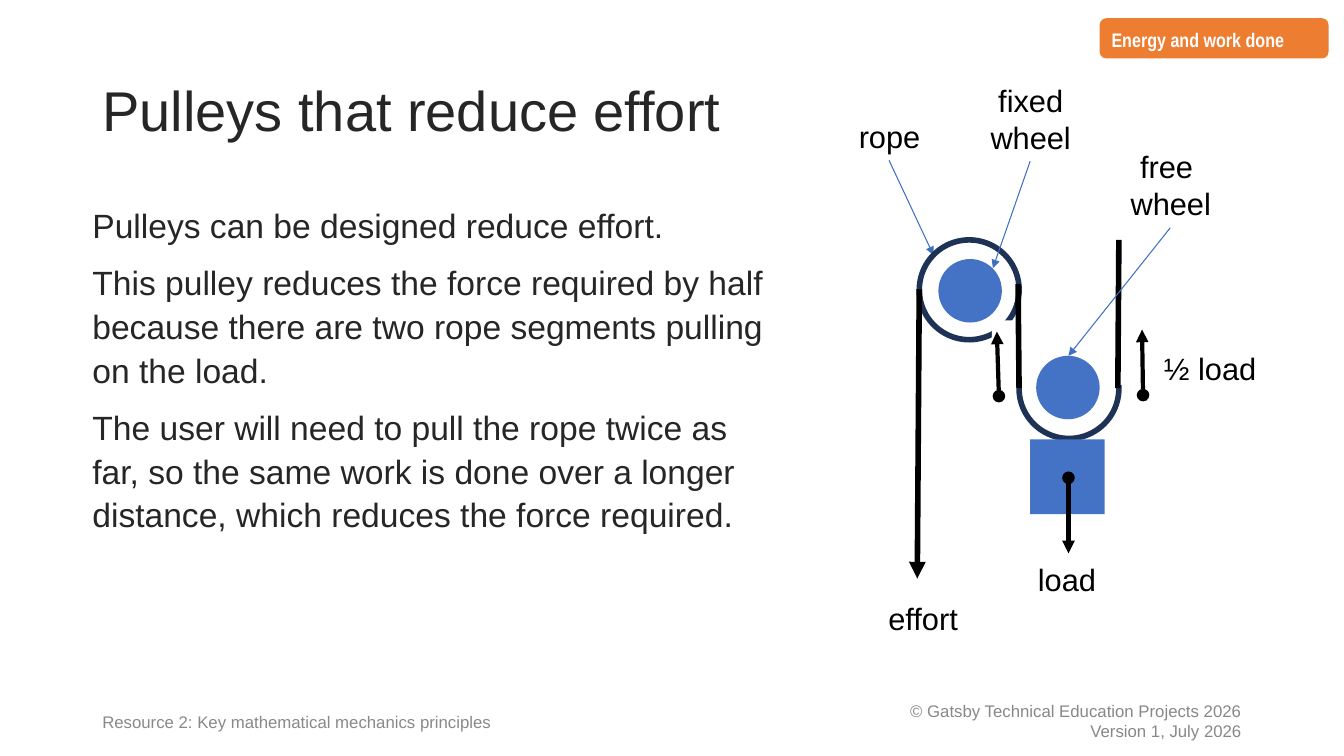
from pptx import Presentation
from pptx.dml.color import RGBColor
from pptx.enum.shapes import MSO_CONNECTOR as Connector, MSO_SHAPE as Shape
from pptx.enum.text import MSO_ANCHOR as Anchor, MSO_AUTO_SIZE as AutoSize, PP_ALIGN as Align
from pptx.oxml.ns import qn
from pptx.util import Pt
from lxml.etree import SubElement

BLACK, WHITE, INK = "000000", "FFFFFF", "262626"
BLUE, POINTER_BLUE, ROPE_NAVY, ORANGE = "4472C4", "3F6FC3", "1E3256", "ED7D31"
RING, DISC, BLOCK = 71.28, 45.36, 53.28


def rgb(hex_code):
    return RGBColor.from_string(hex_code)


def place(part, left, top, width, height):
    part.left, part.top, part.width, part.height = map(Pt, (left, top, width, height))


def write(frame, lines, size, color, font="Arial", align=Align.LEFT,
          anchor=Anchor.TOP, spacing=1.0, gap=0, bold=False):
    """Fill a text frame; gap is the space between its paragraphs."""
    frame.text = "\n".join(lines)
    frame.word_wrap = True
    frame.auto_size = AutoSize.NONE
    frame.vertical_anchor = anchor
    for number, paragraph in enumerate(frame.paragraphs):
        paragraph.alignment = align
        paragraph.line_spacing = spacing
        paragraph.space_before = Pt(gap if number else 0)
        for run in paragraph.runs:
            run.font.name, run.font.size, run.font.bold = font, Pt(size), bold
            run.font.color.rgb = rgb(color)


def add_text(slide, box, lines, size, color, **style):
    holder = slide.shapes.add_textbox(*map(Pt, box))
    write(holder.text_frame, lines, size, color, **style)


def add_solid(slide, kind, box, fill=None, outline=None):
    solid = slide.shapes.add_shape(kind, *map(Pt, box))
    solid.shadow.inherit = False
    if fill:
        solid.fill.solid()
        solid.fill.fore_color.rgb = rgb(fill)
    else:
        solid.fill.background()
    if outline:
        solid.line.color.rgb = rgb(outline)
        solid.line.width = Pt(4)
    else:
        solid.line.fill.background()
    return solid


def add_heading(slide, box):
    title = slide.shapes.title
    place(title, *box)
    write(title.text_frame, ["Pulleys that reduce effort"], 40, INK,
          anchor=Anchor.MIDDLE, spacing=0.9)


def add_explanation(slide, box):
    body = slide.placeholders[1]
    place(body, *box)
    frame = body.text_frame
    frame.margin_left = frame.margin_right = frame.margin_top = frame.margin_bottom = 0
    write(frame, [
        "Pulleys can be designed reduce effort.",
        "This pulley reduces the force required by half because there are "
        "two rope segments pulling on the load.",
        "The user will need to pull the rope twice as far, so the same work is "
        "done over a longer distance, which reduces the force required.",
    ], 24, INK, spacing=1.08, gap=10)
    for paragraph in frame.paragraphs:
        properties = paragraph._p.get_or_add_pPr()
        properties.set("marL", "0")
        properties.set("indent", "0")
        SubElement(properties, qn("a:buNone"))


def add_pulley_diagram(slide, left, top):
    def label(text, center, y, lines=1):
        width = 115.92
        add_text(slide, (left + center - width / 2, top + y, width, 7.2 + 26.64 * lines),
                 [text], 22, BLACK, align=Align.CENTER)

    def line(start, end, width, color=BLACK, head=None, tail=None):
        (x1, y1), (x2, y2) = start, end
        stroke = slide.shapes.add_connector(
            Connector.STRAIGHT, Pt(left + x1), Pt(top + y1), Pt(left + x2), Pt(top + y2))
        stroke.line.color.rgb = rgb(color)
        stroke.line.width = Pt(width)
        outline = stroke.line._get_or_add_ln()
        for tag, ending in (("a:headEnd", head), ("a:tailEnd", tail)):
            if ending:
                SubElement(outline, qn(tag), type=ending)
        SubElement(stroke._element.spPr, qn("a:effectLst"))

    def pointer(start, end):
        line(start, end, 0.75, POINTER_BLUE, tail="triangle")

    def force(start, end):
        line(start, end, 3, head="oval", tail="triangle")

    def circle(center_x, center_y, size, **paint):
        add_solid(slide, Shape.OVAL, (left + center_x - size / 2, top + center_y - size / 2,
                                      size, size), **paint)

    label("fixed wheel", 160.2, 0.72, lines=2)
    label("rope", 59.4, 26.64)
    label("effort", 83.4, 370.8)
    label("free \vwheel", 260.28, 48.24, lines=2)
    label("load", 186.12, 342.72)
    label("½ load", 288.36, 192.24)

    # Fixed wheel with the effort rope
    pointer((59.04, 60.48), (90.72, 128.16))
    circle(116.28, 153, RING, outline=ROPE_NAVY)
    line((80.64, 152.64), (79.2, 359.28), 4, tail="triangle")
    circle(117, 153.72, DISC, fill=BLUE)
    pointer((159.84, 61.2), (133.2, 137.52))

    # Free wheel carrying the load; a white mask hides the top of its rope
    circle(187.56, 223.56, RING, outline=ROPE_NAVY)
    add_solid(slide, Shape.RECTANGLE, (left + 159.84, top + 259.92, BLOCK, BLOCK), fill=BLUE)
    force((187.2, 287.28), (187.2, 341.28))
    add_solid(slide, Shape.RECTANGLE, (left + 132.48, top + 174.96, 106.56, 46.08), fill=WHITE)
    circle(186.84, 222.84, DISC, fill=BLUE)
    line((223.2, 117.36), (222.48, 223.2), 4)
    line((151.2, 149.04), (151.92, 223.2), 4)
    pointer((259.92, 108.72), (187.2, 200.16))
    force((240.48, 228.24), (239.76, 181.44))
    force((137.52, 228.96), (136.08, 182.88))


def add_footer(slide, left, top, width):
    add_text(slide, (left, top, 380, 29.5),
             ["Resource 2: Key mathematical mechanics principles"], 12, "898989",
             anchor=Anchor.MIDDLE, spacing=1.08)
    add_text(slide, (left + width - 324, top, 324, 28.8),
             ["© Gatsby Technical Education Projects 2026", "Version 1, July 2026"],
             12, "888888", align=Align.RIGHT, anchor=Anchor.MIDDLE)


def add_topic_badge(slide, box):
    badge = add_solid(slide, Shape.FLOWCHART_ALTERNATE_PROCESS, box, fill=ORANGE)
    write(badge.text_frame, ["Energy and work done"], 14, WHITE, font="Arial Narrow",
          anchor=Anchor.MIDDLE, spacing=1.08, bold=True)


def main():
    deck = Presentation()
    deck.slide_width, deck.slide_height = Pt(960), Pt(540)
    slide = deck.slides.add_slide(deck.slide_layouts[1])
    add_heading(slide, (66, 28.8, 828, 104.4))
    add_explanation(slide, (66, 144, 489.6, 303.84))
    add_pulley_diagram(slide, 576, 54)
    add_footer(slide, 66, 500.4, 828)
    add_topic_badge(slide, (785.5, 13, 163.5, 28.8))
    deck.save("out.pptx")


if __name__ == "__main__":
    main()
